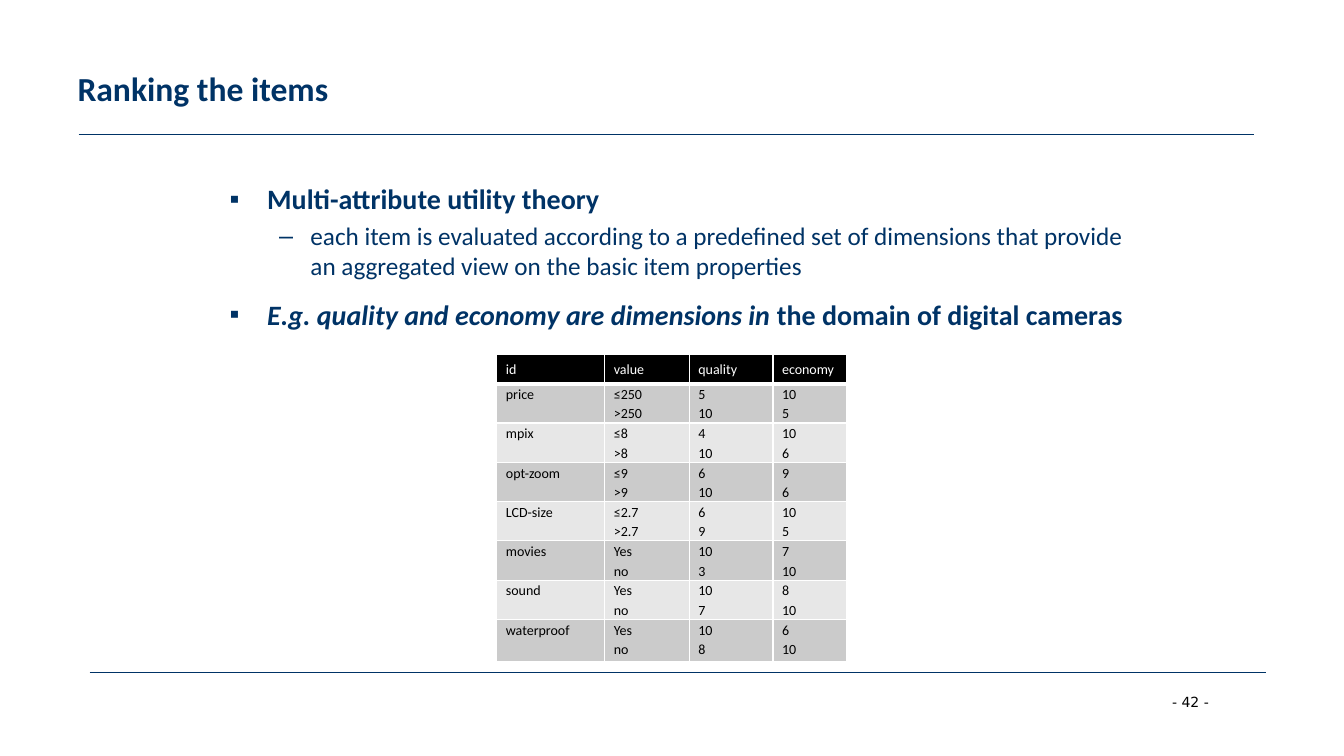
from lxml import etree
from pptx import Presentation
from pptx import util as u
from pptx.dml.color import RGBColor
from pptx.enum import shapes, text
from pptx.oxml import ns

NAVY = RGBColor(0x00, 0x33, 0x66)
BLACK = RGBColor(0x00, 0x00, 0x00)
WHITE = RGBColor(0xFF, 0xFF, 0xFF)
DARK_BAND = RGBColor(0xCB, 0xCB, 0xCB)
LIGHT_BAND = RGBColor(0xE7, 0xE7, 0xE7)

FONT = "Calibri"
LEVELS = [
    dict(bullet="▪", left=0.97, hang=0.95, size=20, bold=True, before=12),
    dict(bullet="–", left=2.06, hang=0.79, size=18, bold=False, before=3.6),
]
BULLETS = [
    (0, [("Multi-attribute utility theory", False)]),
    (1, [("each item is evaluated according to a predefined set of dimensions "
          "that provide an aggregated view on the basic item properties", False)]),
    (0, [("E.g. quality and economy are dimensions in ", True),
         ("the domain of digital cameras", False)]),
]

HEADER = ["id", "value", "quality", "economy"]
ITEMS = [
    ("price", "≤250\n>250", "5\n10", "10\n5"),
    ("mpix", "≤8\n>8", "4\n10", "10\n6"),
    ("opt-zoom", "≤9\n>9", "6\n10", "9\n6"),
    ("LCD-size", "≤2.7\n>2.7", "6\n9", "10\n5"),
    ("movies", "Yes\nno", "10\n3", "7\n10"),
    ("sound", "Yes\nno", "10\n7", "8\n10"),
    ("waterproof", "Yes\nno", "10\n8", "6\n10"),
]
COLUMN_WIDTHS = [2.72, 2.13, 2.11, 1.85]
ROW_HEIGHTS = [0.71] + [0.99] * 6 + [1.07]


def set_attributes(target, values):
    for name, value in values.items():
        setattr(target, name, value)


def place(sp, left, top, width, height):
    set_attributes(sp, dict(left=u.Cm(left), top=u.Cm(top),
                            width=u.Cm(width), height=u.Cm(height)))


def add_run(p, words, size, color, font=FONT, bold=False, italic=False):
    r = p.add_run()
    r.text = words
    set_attributes(r.font, dict(name=font, size=u.Pt(size), bold=bold, italic=italic))
    r.font.color.rgb = color


def add_rule(s, left, top, right):
    line = s.shapes.add_connector(shapes.MSO_CONNECTOR.STRAIGHT,
                                  u.Cm(left), u.Cm(top), u.Cm(right), u.Cm(top))
    line.line.color.rgb = NAVY
    line.line.width = u.Pt(0.75)
    etree.SubElement(line._element.spPr, ns.qn("a:effectLst"))


def add_page_number(s, number):
    sp = s.shapes.add_textbox(u.Cm(29.29), u.Cm(17.35), u.Cm(1.7), u.Cm(0.69))
    tf = sp.text_frame
    set_attributes(tf, dict(word_wrap=False, auto_size=text.MSO_AUTO_SIZE.SHAPE_TO_FIT_TEXT))
    add_run(tf.paragraphs[0], f"- {number} -", 10, BLACK, font="DejaVu Sans")


def fill_title(sp, words):
    place(sp, 1.7, 0.64, 30.48, 3.18)
    tf = sp.text_frame
    set_attributes(tf, dict(vertical_anchor=text.MSO_ANCHOR.MIDDLE,
                            auto_size=text.MSO_AUTO_SIZE.NONE))
    p = tf.paragraphs[0]
    p.alignment = text.PP_ALIGN.LEFT
    add_run(p, words, 24, NAVY, bold=True)


def set_bullet(p, mark, left, hang):
    pPr = p._p.get_or_add_pPr()
    pPr.set("marL", str(u.Cm(left)))
    pPr.set("indent", str(-u.Cm(hang)))
    etree.SubElement(pPr, ns.qn("a:buChar")).set("char", mark)


def fill_body(sp, bullets):
    place(sp, 5.51, 4.45, 23.24, 12.57)
    tf = sp.text_frame
    tf.auto_size = text.MSO_AUTO_SIZE.NONE
    for i, (level, runs) in enumerate(bullets):
        p = tf.add_paragraph() if i else tf.paragraphs[0]
        look = LEVELS[level]
        set_attributes(p, dict(level=level, space_before=u.Pt(look["before"])))
        set_bullet(p, look["bullet"], look["left"], look["hang"])
        for words, italic in runs:
            add_run(p, words, look["size"], NAVY, bold=look["bold"], italic=italic)


def set_borders(cell, top, bottom):
    """Draw white borders; top and bottom are widths in points."""
    tcPr = cell._tc.get_or_add_tcPr()
    for side, width in dict(L=1, R=1, T=top, B=bottom).items():
        ln = etree.SubElement(tcPr, ns.qn(f"a:ln{side}"), w=str(u.Pt(width)))
        solid = etree.SubElement(ln, ns.qn("a:solidFill"))
        etree.SubElement(solid, ns.qn("a:srgbClr"), val=str(WHITE))


def fill_cell(cell, words, row):
    is_header = row == 0
    margin = u.Cm(0.13 if is_header else 0)
    set_attributes(cell, dict(margin_left=u.Cm(0.23), margin_right=u.Cm(0.23),
                              margin_top=margin, margin_bottom=margin))
    set_borders(cell, top=3 if row == 1 else 1, bottom=3 if is_header else 1)
    cell.fill.solid()
    cell.fill.fore_color.rgb = BLACK if is_header else (LIGHT_BAND, DARK_BAND)[row % 2]
    tf = cell.text_frame
    for i, line in enumerate(words.split("\n")):
        p = tf.add_paragraph() if i else tf.paragraphs[0]
        p.line_spacing = 1.15
        add_run(p, line, 10, WHITE if is_header else BLACK)
    p.space_after = u.Pt(10)


def add_utility_table(s):
    rows = [HEADER] + ITEMS
    table = s.shapes.add_table(len(rows), len(HEADER), u.Cm(12.52), u.Cm(8.92),
                               u.Cm(sum(COLUMN_WIDTHS)), u.Cm(sum(ROW_HEIGHTS))).table
    for column, width in zip(table.columns, COLUMN_WIDTHS):
        column.width = u.Cm(width)
    for i, (row, height) in enumerate(zip(rows, ROW_HEIGHTS)):
        table.rows[i].height = u.Cm(height)
        for j, words in enumerate(row):
            fill_cell(table.cell(i, j), words, i)


def main():
    prs = Presentation()
    set_attributes(prs, dict(slide_width=u.Cm(33.87), slide_height=u.Cm(19.05)))
    s = prs.slides.add_slide(prs.slide_layouts[1])
    add_rule(s, 1.98, 3.38, 31.6)
    add_page_number(s, 42)
    add_rule(s, 2.26, 16.94, 31.9)
    fill_title(s.shapes.title, "Ranking the items")
    fill_body(s.placeholders[1], BULLETS)
    add_utility_table(s)
    prs.save("out.pptx")


if __name__ == "__main__":
    main()
